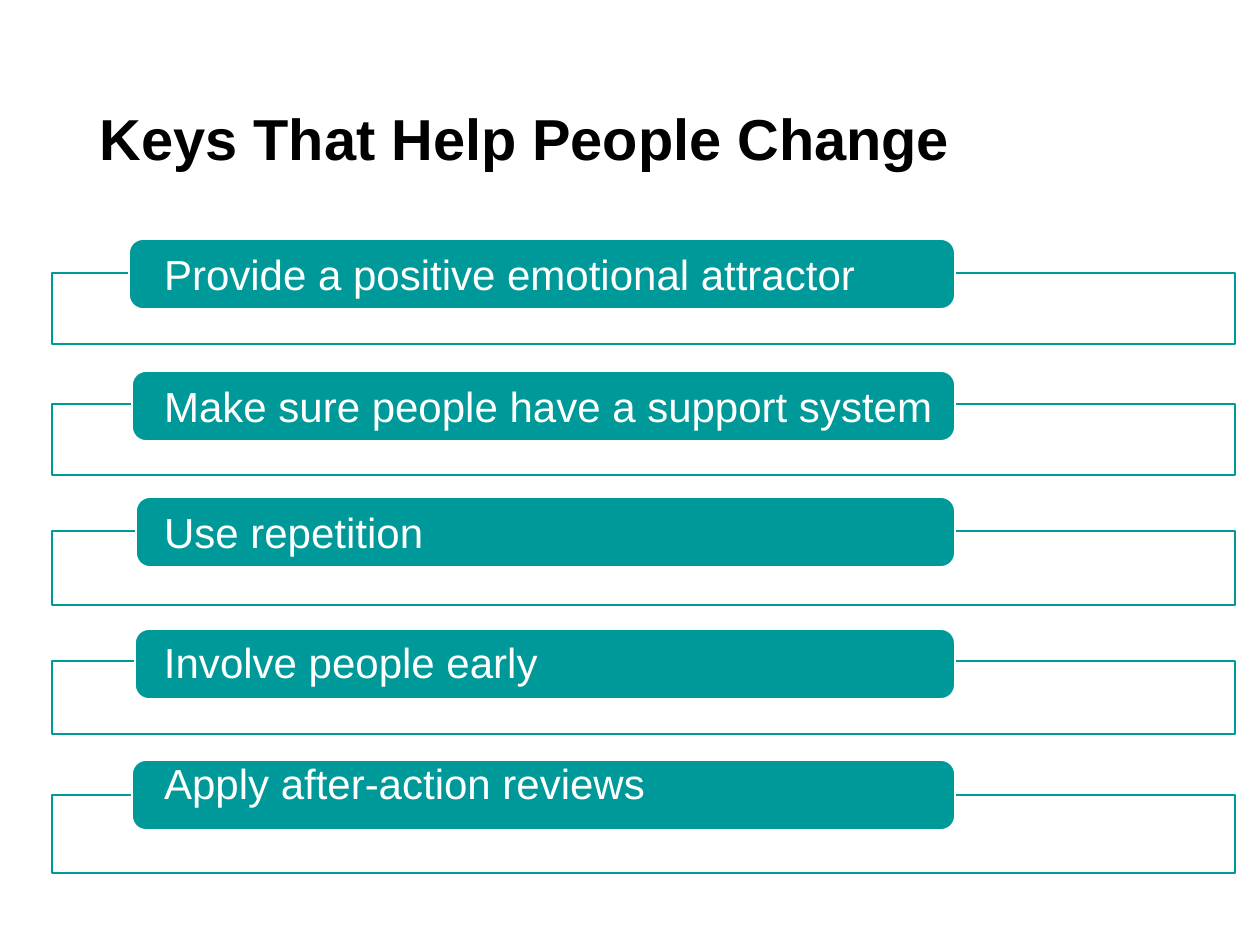
import pptx
import pptx.util
from pptx.dml.color import RGBColor
from pptx.enum.shapes import MSO_SHAPE
from pptx.enum.text import MSO_ANCHOR, PP_ALIGN

PX = 914400 / 126
TEAL = RGBColor(0x00, 0x99, 0x99)
WHITE = RGBColor(0xFF, 0xFF, 0xFF)
BLACK = RGBColor(0x00, 0x00, 0x00)
FONT = "Arial"

FRAME_LEFT, FRAME_WIDTH = 52, 1183
LABEL_RIGHT, LABEL_HEIGHT = 955, 70
TEXT_LEFT = 164

# text, frame top, frame height, label left, label top, rise of the text
KEYS = [
    ("Provide a positive emotional attractor", 273, 71, 129, 239, 0),
    ("Make sure people have a support system", 404, 71, 132, 371, 0),
    ("Use repetition", 531, 74, 136, 497, 0),
    ("Involve people early", 661, 73, 135, 629, 2),
    ("Apply after-action reviews", 795, 78, 132, 760, 12),
]


def px(value):
    return pptx.util.Emu(round(value * PX))


def style_font(paragraph, size, color, bold=False):
    font = paragraph.runs[0].font
    font.name = FONT
    font.size = pptx.util.Pt(size)
    font.bold = bold
    font.color.rgb = color


def add_box(slide, preset, left, top, width, height, line_color):
    box = slide.shapes.add_shape(preset, px(left), px(top), px(width), px(height))
    box.shadow.inherit = False
    box.line.color.rgb = line_color
    box.line.width = pptx.util.Pt(1)
    return box


def add_title(slide, text):
    title = slide.shapes.title
    title.left, title.top, title.width, title.height = map(px, (87, 50, 951, 183))
    frame = title.text_frame
    frame.text = text
    frame.word_wrap = True
    frame.vertical_anchor = MSO_ANCHOR.MIDDLE
    paragraph = frame.paragraphs[0]
    paragraph.alignment = PP_ALIGN.LEFT
    paragraph.line_spacing = 0.9
    style_font(paragraph, 33, BLACK, bold=True)


def add_frame(slide, top, height):
    frame = add_box(slide, MSO_SHAPE.RECTANGLE, FRAME_LEFT, top,
                    FRAME_WIDTH, height, TEAL)
    frame.fill.background()


def add_label(slide, text, left, top, rise):
    label = add_box(slide, MSO_SHAPE.ROUNDED_RECTANGLE, left, top,
                    LABEL_RIGHT - left, LABEL_HEIGHT, WHITE)
    label.adjustments[0] = 0.2
    label.fill.solid()
    label.fill.fore_color.rgb = TEAL

    frame = label.text_frame
    frame.text = text
    frame.word_wrap = True
    frame.vertical_anchor = MSO_ANCHOR.MIDDLE
    # The preset's own text area is inset by about 4 px at its corners
    frame.margin_left = px(TEXT_LEFT - left - 4)
    frame.margin_right = frame.margin_top = 0
    frame.margin_bottom = px(2 * rise)
    paragraph = frame.paragraphs[0]
    paragraph.alignment = PP_ALIGN.LEFT
    style_font(paragraph, 24, WHITE)


def main():
    deck = pptx.Presentation()
    deck.slide_width = pptx.util.Inches(10)
    deck.slide_height = pptx.util.Inches(7.5)
    slide = deck.slides.add_slide(deck.slide_layouts[5])

    add_title(slide, "Keys That Help People Change")

    # Each key is a label lying over the top edge of its frame
    for text, frame_top, frame_height, left, top, rise in KEYS:
        add_frame(slide, frame_top, frame_height)
        add_label(slide, text, left, top, rise)

    deck.save("out.pptx")


if __name__ == "__main__":
    main()
